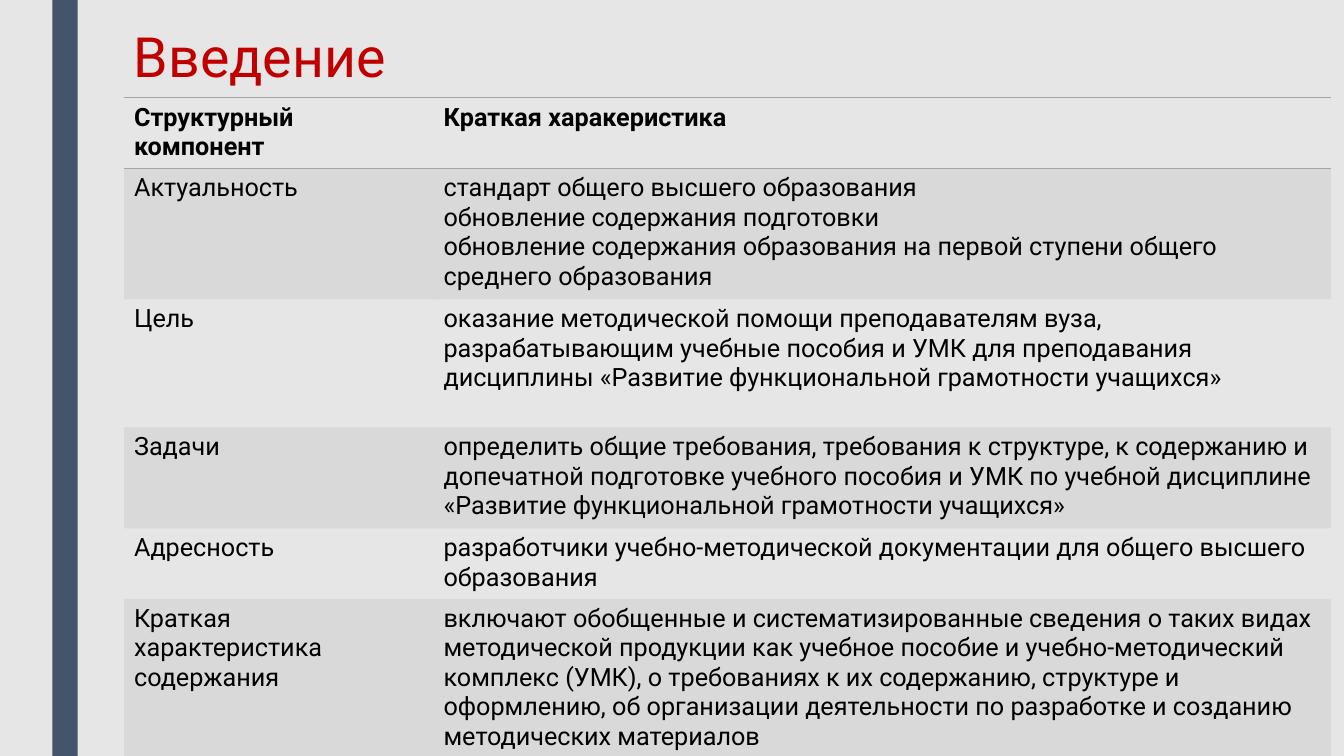
from lxml.etree import SubElement
from pptx import Presentation
from pptx.dml.color import RGBColor
from pptx.enum.shapes import MSO_SHAPE
from pptx.enum.text import MSO_ANCHOR
from pptx.oxml import parse_xml
from pptx.oxml.ns import nsdecls, qn
from pptx.util import Inches, Pt

FONT = "Roboto"
GRAY = "A5A5A5"
NO_GRID_STYLE = "{2D5ABB26-0587-4C30-8999-92F81FD0307C}"
COLUMN_WIDTHS = (3.07, 8.9)

# Row height, component, paragraphs of its description
ROWS = [
    (0.69, "Структурный компонент", ["Краткая харакеристика"]),
    (1.28, "Актуальность", [
        "стандарт общего высшего образования",
        "обновление содержания подготовки",
        "обновление содержания образования на первой ступени общего среднего образования",
    ]),
    (1.27, "Цель", [
        "оказание методической помощи преподавателям вуза, разрабатывающим учебные "
        "пособия и УМК для преподавания дисциплины «Развитие функциональной "
        "грамотности учащихся»",
    ]),
    (0.98, "Задачи", [
        "определить общие требования, требования к структуре, к содержанию и "
        "допечатной подготовке учебного пособия и УМК по учебной дисциплине "
        "«Развитие функциональной грамотности учащихся»",
    ]),
    (0.69, "Адресность", [
        "разработчики учебно-методической документации для общего высшего образования",
    ]),
    (1.57, "Краткая характеристика содержания", [
        "включают обобщенные и систематизированные сведения о таких видах "
        "методической продукции как учебное пособие и учебно-методический комплекс "
        "(УМК), о требованиях к их содержанию, структуре и оформлению, об организации "
        "деятельности по разработке и созданию методических материалов",
    ]),
]


def color(hex_value):
    return RGBColor.from_string(hex_value)


def style_paragraph(paragraph, size, hex_value, bold=False):
    font = paragraph.font
    font.name, font.size, font.bold = FONT, Pt(size), bold
    font.color.rgb = color(hex_value)


def add_side_bar(slide):
    bar = slide.shapes.add_shape(
        MSO_SHAPE.RECTANGLE, Inches(0.52), 0, Inches(0.25), Inches(7.5))
    bar.shadow.inherit = False
    bar.fill.solid()
    bar.fill.fore_color.rgb = color("44546A")
    bar.line.fill.background()


def add_title(slide, text):
    title = slide.shapes.add_textbox(
        Inches(1.23), Inches(0.22), Inches(10.5), Inches(0.75)).text_frame
    title.word_wrap = True
    title.vertical_anchor = MSO_ANCHOR.MIDDLE
    heading = title.paragraphs[0]
    heading.text = text
    heading.line_spacing = 0.89
    style_paragraph(heading, 39.6, "C00000")


def fill_band(cell):
    """Gray band at 20 % opacity."""
    cell.fill.solid()
    cell.fill.fore_color.rgb = color(GRAY)
    band_color = cell._tc.tcPr.find(".//" + qn("a:srgbClr"))
    SubElement(band_color, qn("a:alpha"), val="20000")


def add_borders(cell, sides):
    """Borders precede the fill in the cell properties."""
    for position, side in enumerate(sides):
        border = parse_xml(
            f'<a:ln{side} {nsdecls("a")} w="{Pt(1)}"><a:solidFill>'
            f'<a:srgbClr val="{GRAY}"/></a:solidFill></a:ln{side}>')
        cell._tc.get_or_add_tcPr().insert(position, border)


def fill_cell(cell, paragraphs, bold):
    cell.text = "\n".join(paragraphs)
    for paragraph in cell.text_frame.paragraphs:
        style_paragraph(paragraph, 18, "000000", bold)


def add_components_table(slide):
    table = slide.shapes.add_table(
        len(ROWS), len(COLUMN_WIDTHS), Inches(1.23), Inches(0.97),
        Inches(sum(COLUMN_WIDTHS)), Inches(sum(row[0] for row in ROWS))).table
    table._tbl.tblPr.find(qn("a:tableStyleId")).text = NO_GRID_STYLE
    for column, width in zip(table.columns, COLUMN_WIDTHS):
        column.width = Inches(width)

    for index, (height, component, description) in enumerate(ROWS):
        table.rows[index].height = Inches(height)
        is_header = index == 0
        for cell, paragraphs in zip(table.rows[index].cells, ([component], description)):
            fill_cell(cell, paragraphs, bold=is_header)
            if index % 2:
                fill_band(cell)
            else:
                cell.fill.background()
            if is_header:
                add_borders(cell, "TB")
            elif index == len(ROWS) - 1:
                add_borders(cell, "B")


def main():
    presentation = Presentation()
    presentation.slide_width = Inches(13.33)
    presentation.slide_height = Inches(7.5)
    slide = presentation.slides.add_slide(presentation.slide_layouts[6])
    slide.background.fill.solid()
    slide.background.fill.fore_color.rgb = color("E7E6E6")

    add_side_bar(slide)
    add_title(slide, "Введение")
    add_components_table(slide)
    presentation.save("out.pptx")


if __name__ == "__main__":
    main()
